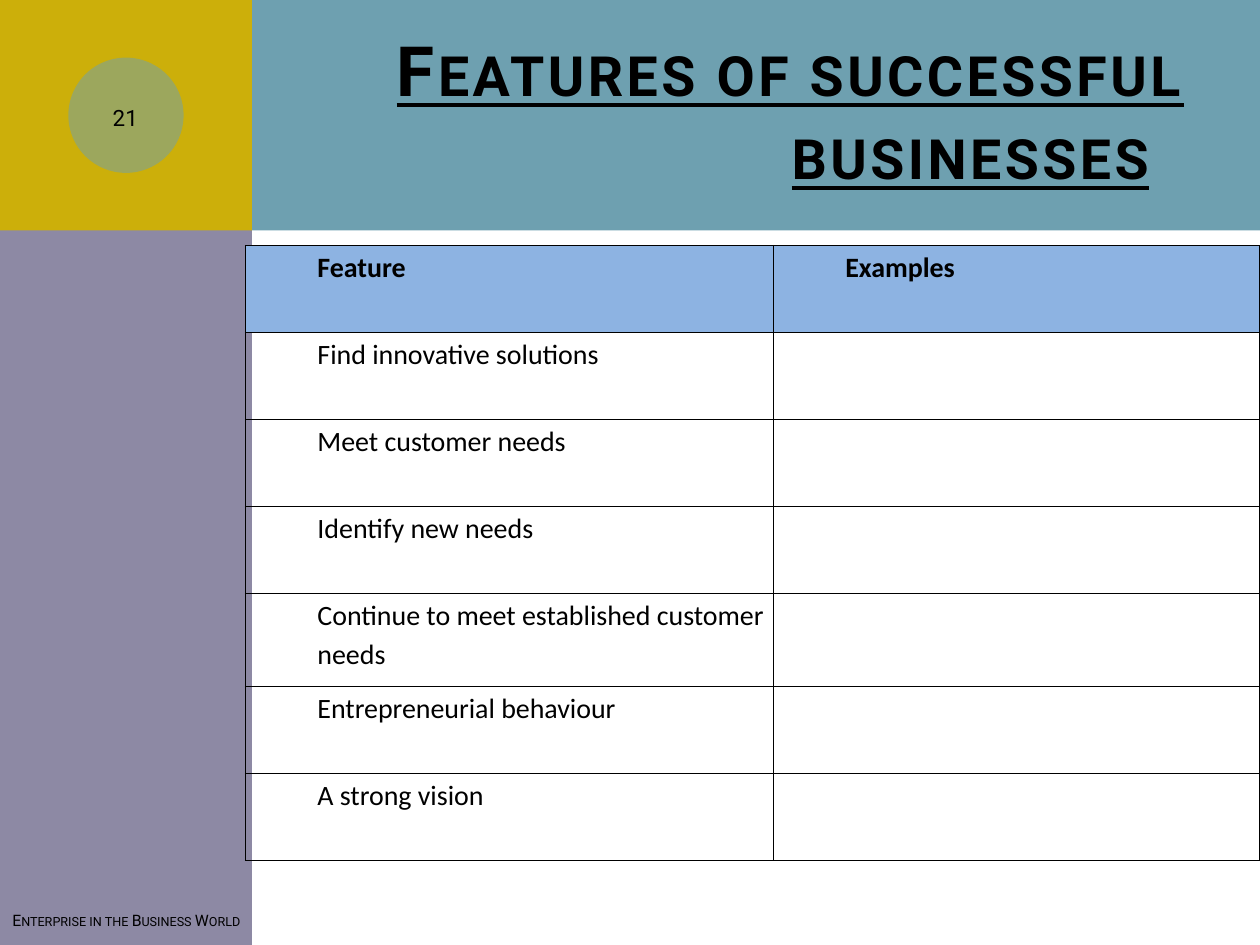
"""Build the slide on the features of successful businesses."""
from lxml import etree
from pptx import Presentation
from pptx.dml.color import RGBColor
from pptx.enum.shapes import MSO_SHAPE
from pptx.enum.text import MSO_ANCHOR, MSO_AUTO_SIZE, PP_ALIGN
from pptx.oxml.ns import qn
from pptx.util import Inches, Pt

RECTANGLE, OVAL = MSO_SHAPE.RECTANGLE, MSO_SHAPE.OVAL
MIDDLE, NO_FIT = MSO_ANCHOR.MIDDLE, MSO_AUTO_SIZE.NONE
LEFT, CENTER, RIGHT = PP_ALIGN.LEFT, PP_ALIGN.CENTER, PP_ALIGN.RIGHT
COLORS = {"band": "6EA0B0", "sidebar": "8D89A4", "corner": "CCAF0A",
          "header": "8DB3E2", "ink": "000000"}
WIDTH, HEIGHT = 10, 7.5
SIDEBAR, BAND = WIDTH * 0.2, 1.83
BADGE = BAND / 2


def write(frame, text, size, font, align=LEFT, small_caps=True):
    frame.text = text
    frame.word_wrap = True
    paragraph = frame.paragraphs[0]
    paragraph.alignment = align
    run = paragraph.runs[0]
    run.font.size, run.font.name = Pt(size), font
    run.font.color.rgb = RGBColor.from_string(COLORS["ink"])
    if small_caps:
        frame.vertical_anchor = MIDDLE
        run.font._element.set("cap", "small")
    return paragraph


def add_borders(cell):
    properties = cell._tc.get_or_add_tcPr()
    for position, side in enumerate(("lnL", "lnR", "lnT", "lnB")):
        border = etree.Element(qn(f"a:{side}"), w=str(Pt(1)))
        fill = etree.SubElement(border, qn("a:solidFill"))
        etree.SubElement(fill, qn("a:srgbClr"), val=COLORS["ink"])
        properties.insert(position, border)


prs = Presentation()
prs.slide_width, prs.slide_height = Inches(WIDTH), Inches(HEIGHT)
slide = prs.slides.add_slide(prs.slide_layouts[5])

panels = [
    (RECTANGLE, "band", SIDEBAR / 4, 0, WIDTH - SIDEBAR / 4, BAND),
    (RECTANGLE, "sidebar", 0, 0, SIDEBAR, HEIGHT),
    (RECTANGLE, "corner", 0, 0, SIDEBAR, BAND),
    (OVAL, "band", (SIDEBAR - BADGE) / 2, (BAND - BADGE) / 2, BADGE, BADGE),
]
for kind, color, *box in panels:
    panel = slide.shapes.add_shape(kind, *map(Inches, box))
    panel.shadow.inherit = False
    panel.fill.solid()
    panel.fill.fore_color.rgb = RGBColor.from_string(COLORS[color])
    panel.line.fill.background()
    if kind == OVAL:
        tint = panel.fill._xPr.find(f".//{qn('a:srgbClr')}")
        etree.SubElement(tint, qn("a:alpha"), val="50000")

title = slide.shapes.title
title.left, title.top, title.width, title.height = map(Inches, (2.67, 0.25, 6.83, 1.25))
heading = write(title.text_frame, "Features of successful businesses", 39.6, "Roboto", RIGHT)
title.text_frame.auto_size = NO_FIT
heading.runs[0].font.bold = heading.runs[0].font.underline = True
heading.runs[0].font._element.set("spc", "200")
slide.shapes._spTree.append(title._element)

features = ["Feature", "Find innovative solutions", "Meet customer needs",
            "Identify new needs", "Continue to meet established customer needs",
            "Entrepreneurial behaviour", "A strong vision"]
table = slide.shapes.add_table(len(features), 2, Inches(1.95), Inches(1.95),
                               Inches(8.05), Inches(4.9)).table
for column, width in zip(table.columns, (4.19, 3.86)):
    column.width = Inches(width)
for index, feature in enumerate(features):
    is_header = index == 0
    table.rows[index].height = Inches(0.74 if index == 4 else 0.69)
    for cell, text in zip(table.rows[index].cells, (feature, "Examples" if is_header else "")):
        cell.margin_left = cell.margin_right = Inches(0.07)
        cell.margin_top = cell.margin_bottom = 0
        if is_header:
            cell.fill.solid()
            cell.fill.fore_color.rgb = RGBColor.from_string(COLORS["header"])
        else:
            cell.fill.background()
        add_borders(cell)
        if text:
            entry = write(cell.text_frame, text, 16, "Calibri", small_caps=False)
            entry.line_spacing = 1.15
            entry.runs[0].font.bold = is_header
            entry._p.get_or_add_pPr().set("marL", str(Inches(0.5)))

labels = [
    ("Enterprise in the Business World", 9, LEFT, 0, 7.1, 3.17, 0.4),
    ("21", 16, CENTER, 0.58, 0.58, 0.83, 0.67),
]
for text, size, align, *box in labels:
    label = slide.shapes.add_textbox(*map(Inches, box))
    write(label.text_frame, text, size, "Roboto", align)

prs.save("out.pptx")
